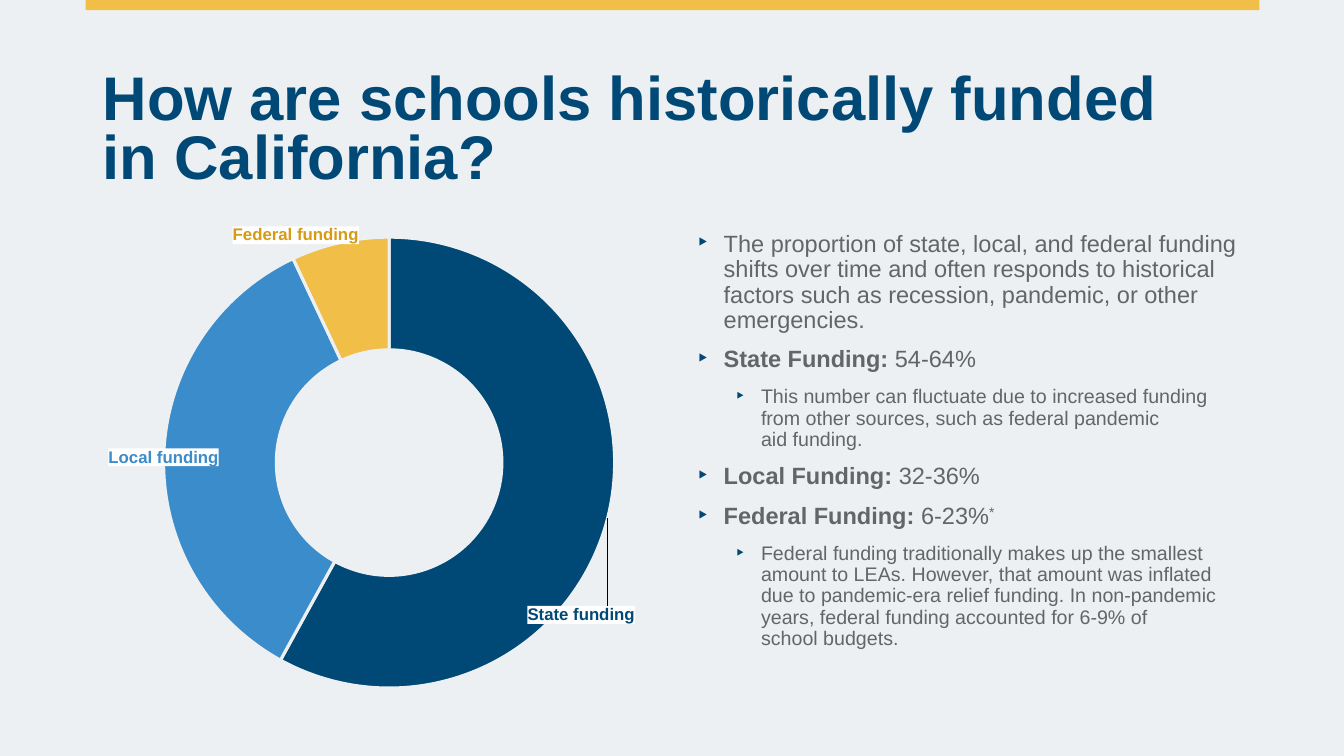
import pptx
import pptx.chart.data
import pptx.dml.color
import pptx.enum.chart
import pptx.enum.shapes
import pptx.enum.text
import pptx.oxml
import pptx.oxml.ns
import pptx.util
from lxml import etree

RGB = pptx.dml.color.RGBColor
NAVY = RGB(0x00, 0x49, 0x76)
BLUE = RGB(0x3B, 0x8C, 0xCB)
GOLD = RGB(0xF1, 0xBE, 0x48)
DARK_GOLD = RGB(0xD6, 0x9A, 0x13)
GRAY = RGB(0x62, 0x66, 0x69)
WHITE = RGB(0xFF, 0xFF, 0xFF)
PALE = RGB(0xED, 0xF0, 0xF2)
FONT = "Arial"
WIDTH, HEIGHT = 13.33, 7.5

BAR = (0.85, 0, 11.64, 0.1)
TITLE_BOX = (0.92, 0.4, 11.5, 1.6)
BODY_BOX = (6.82, 2, 5.6, 4.76)
CHART_BOX = (1.06, 2.21, 5.6, 4.76)
PLOT = {"x": 0.1, "y": 0.03, "w": 0.8, "h": 0.94}

TITLE = "How are schools historically funded \nin California?"
BODY = [
    (0, [("The proportion of state, local, and federal funding shifts over time and often "
          "responds to historical factors such as recession, pandemic, or other emergencies.", "")]),
    (0, [("State Funding:", "bold"), (" 54-64%", "")]),
    (1, [("This number can fluctuate due to increased funding from other sources, "
          "such as federal pandemic \naid funding.", "")]),
    (0, [("Local Funding:", "bold"), (" 32-36%", "")]),
    (0, [("Federal Funding:", "bold"), (" 6-23%", ""), ("*", "super")]),
    (1, [("Federal funding traditionally makes up the smallest amount to LEAs. However, that "
          "amount was inflated due to pandemic-era relief funding. In non-pandemic years, "
          "federal funding accounted for 6-9% of \nschool budgets.", "")]),
]
LEVELS = [(16.8, 0.26, 0.26), (14, 0.63, 0.25)]
FUNDING = [
    ("State funding", 58, NAVY, NAVY, (0.05, 0.23)),
    ("Local funding", 35, BLUE, BLUE, (-0.1, 0)),
    ("Federal funding", 7, GOLD, DARK_GOLD, (-0.1, -0.13)),
]


def inches(box):
    return [pptx.util.Inches(v) for v in box]


def add_box(s, box, top):
    tf = s.shapes.add_textbox(*inches(box)).text_frame
    tf.word_wrap = True
    tf.margin_left = tf.margin_right = tf.margin_bottom = pptx.util.Inches(0.1)
    tf.margin_top = pptx.util.Inches(top)
    return tf


def add_text(p, text, size, color, bold=False):
    for i, line in enumerate(text.split("\n")):
        if i:
            p.add_line_break()
        r = p.add_run()
        r.text = line
        r.font.name, r.font.size, r.font.bold = FONT, pptx.util.Pt(size), bold
        r.font.color.rgb = color
    return r


def add_bullet(p, left, hang):
    pPr = p._p.get_or_add_pPr()
    pPr.set("marL", str(pptx.util.Inches(left)))
    pPr.set("indent", str(-pptx.util.Inches(hang)))
    color = etree.SubElement(pPr, pptx.oxml.ns.qn("a:buClr"))
    etree.SubElement(color, pptx.oxml.ns.qn("a:srgbClr"), val=str(NAVY))
    etree.SubElement(pPr, pptx.oxml.ns.qn("a:buSzPct"), val="120000")
    etree.SubElement(pPr, pptx.oxml.ns.qn("a:buFont"), typeface=FONT)
    etree.SubElement(pPr, pptx.oxml.ns.qn("a:buChar"), char="‣")


def make_layout(values):
    layout = etree.Element(pptx.oxml.ns.qn("c:layout"))
    manual = etree.SubElement(layout, pptx.oxml.ns.qn("c:manualLayout"))
    for name, value in values.items():
        etree.SubElement(manual, pptx.oxml.ns.qn("c:" + name), val=str(value))
    return layout


def add_title(s):
    tf = add_box(s, TITLE_BOX, 0)
    tf.vertical_anchor = pptx.enum.text.MSO_ANCHOR.BOTTOM
    p = tf.paragraphs[0]
    p.line_spacing = 0.8
    add_text(p, TITLE, 44, NAVY, True)


def add_body(s):
    tf = add_box(s, BODY_BOX, 0.3)
    for i, (level, runs) in enumerate(BODY):
        p = tf.add_paragraph() if i else tf.paragraphs[0]
        size, left, hang = LEVELS[level]
        p.level = level
        add_bullet(p, left, hang)
        p.line_spacing = 0.9
        p.space_before = pptx.util.Pt(10 if i else 0)
        for text, style in runs:
            r = add_text(p, text, size, GRAY, style == "bold")
            if style == "super":
                r.font._element.set("baseline", "30000")


def add_funding_chart(s):
    data = pptx.chart.data.CategoryChartData(number_format="0")
    data.categories = [row[0] for row in FUNDING]
    data.add_series("Series 1", [row[1] for row in FUNDING])
    kind = pptx.enum.chart.XL_CHART_TYPE.DOUGHNUT
    chart = s.shapes.add_chart(kind, *inches(CHART_BOX), data).chart
    chart.has_legend = chart.has_title = False
    chart.font.name, chart.font.size = FONT, pptx.util.Pt(10)
    chart.font.color.rgb = GRAY
    plot = chart.plots[0]
    plot.vary_by_categories = True
    for hole in chart._chartSpace.xpath(".//c:holeSize"):
        hole.set("val", "50")
    area = chart._chartSpace.xpath(".//c:plotArea")[0]
    for old in area.xpath("./c:layout"):
        area.remove(old)
    area.insert(0, make_layout({"layoutTarget": "inner", "xMode": "edge", "yMode": "edge", **PLOT}))

    series = plot.series[0]
    for i, (_, _, fill, color, (dx, dy)) in enumerate(FUNDING):
        point = series.points[i]
        point.format.fill.solid()
        point.format.fill.fore_color.rgb = fill
        point.format.line.color.rgb = PALE
        point.format.line.width = pptx.util.Pt(2.25)
        font = point.data_label.font
        font.name, font.size, font.bold = FONT, pptx.util.Pt(12), True
        font.color.rgb = color
        label = series._element.xpath(f"./c:dLbls/c:dLbl[c:idx/@val='{i}']")[0]
        for old in label.xpath("./c:spPr"):
            label.remove(old)
        label.insert(1, make_layout({"x": dx, "y": dy}))
        back = etree.Element(pptx.oxml.ns.qn("c:spPr"))
        solid = etree.SubElement(back, pptx.oxml.ns.qn("a:solidFill"))
        etree.SubElement(solid, pptx.oxml.ns.qn("a:srgbClr"), val=str(WHITE))
        label.xpath("./c:txPr")[0].addprevious(back)
        label.xpath("./c:showVal")[0].set("val", "0")
        label.xpath("./c:showCatName")[0].set("val", "1")


def main():
    """Build the school funding slide."""
    prs = pptx.Presentation()
    prs.slide_width, prs.slide_height = inches((WIDTH, HEIGHT))
    s = prs.slides.add_slide(prs.slide_layouts[6])
    s.background.fill.solid()
    s.background.fill.fore_color.rgb = PALE
    sp = s.shapes.add_shape(pptx.enum.shapes.MSO_SHAPE.RECTANGLE, *inches(BAR))
    sp.shadow.inherit = False
    sp.fill.solid()
    sp.fill.fore_color.rgb = GOLD
    sp.line.fill.background()
    add_title(s)
    add_body(s)
    add_funding_chart(s)
    prs.save("out.pptx")


if __name__ == "__main__":
    main()
